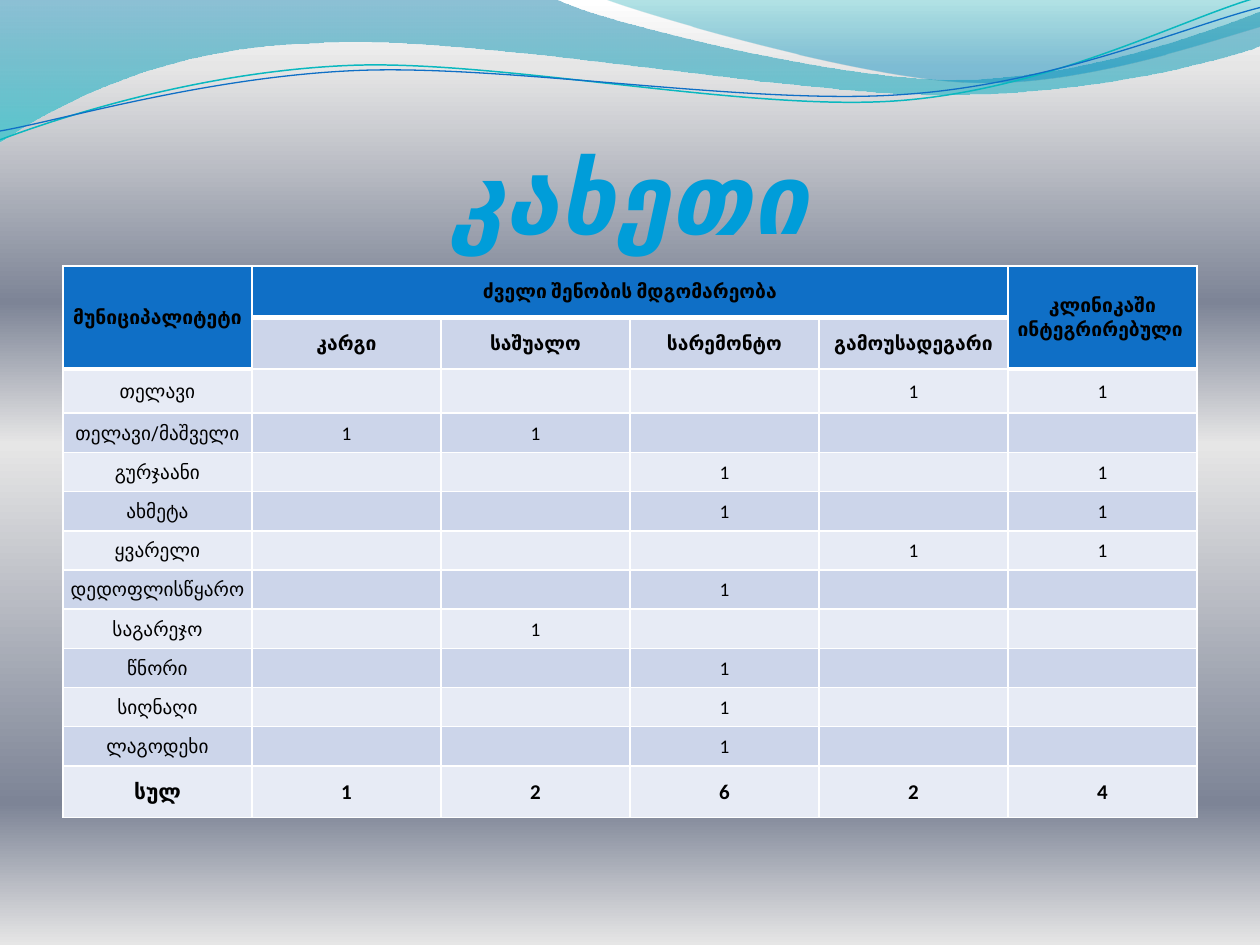
from lxml.etree import Element, SubElement
from pptx import Presentation
from pptx.dml.color import RGBColor
from pptx.enum.text import MSO_ANCHOR as Anchor, PP_ALIGN as Align
from pptx.oxml.ns import qn
from pptx.util import Inches, Pt

WIDTH, HEIGHT = 10, 7.5
MARGIN = 0.05 * WIDTH
TITLE = "კახეთი"
CONDITION = "ძველი შენობის მდგომარეობა"
GRADES = ["კარგი", "საშუალო", "სარემონტო", "გამოუსადეგარი"]
MUNICIPALITY, INTEGRATED = "მუნიციპალიტეტი", "კლინიკაში ინტეგრირებული "
BUILDINGS = [
    ("თელავი", "", "", "", 1, 1),
    ("თელავი/მაშველი", 1, 1, "", "", ""),
    ("გურჯაანი", "", "", 1, "", 1),
    ("ახმეტა", "", "", 1, "", 1),
    ("ყვარელი", "", "", "", 1, 1),
    ("დედოფლისწყარო", "", "", 1, "", ""),
    ("საგარეჯო", "", 1, "", "", ""),
    ("წნორი", "", "", 1, "", ""),
    ("სიღნაღი", "", "", 1, "", ""),
    ("ლაგოდეხი", "", "", 1, "", ""),
]
TOTAL = ("სულ", 1, 2, 6, 2, 4)
ROWS = [(MUNICIPALITY, CONDITION, "", "", "", INTEGRATED),
        ("", *GRADES, ""), *BUILDINGS, TOTAL]
TABLE_TOP, TABLE_HEIGHT = 2.11, 4.38
TALL_ROWS = {0: 0.41, 1: 0.41, 2: 0.35, len(ROWS) - 1: 0.41}
SHORT_ROW = (TABLE_HEIGHT - sum(TALL_ROWS.values())) / (len(ROWS) - len(TALL_ROWS))

BACKDROP = [(0, "FFFFFF", 100), (7, "E6E6E6", 100), (32, "7D8496", 100),
            (47, "E6E6E6", 100), (85, "7D8496", 100), (100, "E6E6E6", 100)]
BANDS = [
    ([(0, "0074A1", 45), (100, "00C6CF", 55)],
     [(0, 0), (4.4, -0.01),
      (4.76, 0.17, 6.64, 0.63, 7.58, 0.63), (8.53, 0.63, 9.58, 0.26, 10, 0.09),
      (10.01, 0.36),
      (9.83, 0.44, 8.7, 0.76, 7.46, 0.75), (6.22, 0.75, 3.82, 0.28, 2.57, 0.34),
      (1.29, 0.36, 0.46, 0.83, -0.01, 1.13), (0, 0)]),
    ([(0, "00A1A9", 30), (80, "008BBF", 45)],
     [(4.79, -0.01),
      (5.09, 0.11, 6.82, 0.62, 7.69, 0.65), (8.56, 0.69, 9.61, 0.32, 10, 0.21),
      (10, 0), (4.79, -0.01)]),
]
STRANDS = [
    ("0AB8BF", 0.85,
     [(0, 1.11), (0.48, 0.93, 1.58, 0.57, 2.77, 0.52),
      (3.95, 0.47, 5.93, 0.89, 7.13, 0.8), (8.33, 0.71, 9.38, 0.15, 9.98, -0.02)]),
    ("0F6FC6", 0.75,
     [(0, 1.04), (0.47, 0.96, 1.64, 0.61, 2.83, 0.56),
      (4.03, 0.51, 5.97, 0.84, 7.17, 0.75), (8.36, 0.67, 9.41, 0.21, 10, 0.06)]),
]


def color(code):
    return RGBColor.from_string(code)


def paint_gradient(fill, stops):
    fill.gradient()
    fill.gradient_angle = 270
    stop_list = fill._xPr.find(qn("a:gradFill")).find(qn("a:gsLst"))
    for default_stop in list(stop_list):
        stop_list.remove(default_stop)
    for position, code, opacity in stops:
        stop = SubElement(stop_list, qn("a:gs"), pos=str(position * 1000))
        tint = SubElement(stop, qn("a:srgbClr"), val=code)
        if opacity < 100:
            SubElement(tint, qn("a:alpha"), val=str(opacity * 1000))


def add_wave(slide, segments, close):
    ends = [(Inches(s[-2]), Inches(s[-1])) for s in segments]
    builder = slide.shapes.build_freeform(*ends[0])
    builder.add_line_segments(ends[1:], close=close)
    wave = builder.convert_to_shape()
    wave.shadow.inherit = False
    lines = list(wave._element.iter(qn("a:lnTo")))
    for line, segment in zip(lines, segments[1:]):
        if len(segment) == 6:
            line.tag = qn("a:cubicBezTo")
            for i in (0, 2):
                handle = Element(qn("a:pt"), x=str(Inches(segment[i]) - wave.left),
                                 y=str(Inches(segment[i + 1]) - wave.top))
                line.insert(i // 2, handle)
    return wave


def style_text(paragraph, size, face, code, bold):
    paragraph.alignment = Align.CENTER
    font = paragraph.font
    font.size, font.name, font.bold = Pt(size), face, bold
    font.color.rgb = color(code)


def add_title(slide):
    box = slide.shapes.add_textbox(
        Inches(MARGIN), Inches(0.77), Inches(WIDTH - 2 * MARGIN), Inches(1.25))
    frame = box.text_frame
    frame.word_wrap, frame.vertical_anchor = True, Anchor.BOTTOM
    frame.margin_left = frame.margin_right = frame.margin_bottom = 0
    heading = frame.paragraphs[0]
    heading.text = TITLE
    style_text(heading, 56, "Calibri", "009DD9", True)
    heading.font.italic = True
    heading.runs[0].font._rPr.set("spc", "50")


def add_borders(cell, bottom_weight):
    properties = cell._tc.get_or_add_tcPr()
    weights = {"a:lnL": 1, "a:lnR": 1, "a:lnT": 1, "a:lnB": bottom_weight}
    for i, (side, weight) in enumerate(weights.items()):
        border = Element(qn(side), w=str(Pt(weight)))
        SubElement(SubElement(border, qn("a:solidFill")), qn("a:srgbClr"), val="FFFFFF")
        properties.insert(i, border)


def add_building_table(slide):
    columns, last = len(TOTAL), len(ROWS) - 1
    table = slide.shapes.add_table(
        len(ROWS), columns, Inches(MARGIN), Inches(TABLE_TOP),
        Inches(WIDTH - 2 * MARGIN), Inches(TABLE_HEIGHT)).table
    for r, values in enumerate(ROWS):
        table.rows[r].height = Inches(TALL_ROWS.get(r, SHORT_ROW))
        for c, value in enumerate(values):
            cell = table.cell(r, c)
            cell.margin_left = cell.margin_right = cell.margin_top = Inches(0.01)
            cell.margin_bottom = 0
            cell.vertical_anchor = Anchor.MIDDLE
            header = r == 0 or (r == 1 and c in (0, columns - 1))
            band = "CCD5EA" if r % 2 else "E7EBF5"
            cell.fill.solid()
            cell.fill.fore_color.rgb = color("0F6FC6" if header else band)
            add_borders(cell, 3 if header else 1)
            entry = cell.text_frame.paragraphs[0]
            if value != "":
                entry.text = str(value)
            style_text(entry, 12 if r == last else 11,
                       "Calibri" if c else "Roboto", "000000", r < 2 or r == last)
    table.cell(0, 0).merge(table.cell(1, 0))
    table.cell(0, 1).merge(table.cell(0, len(GRADES)))
    table.cell(0, columns - 1).merge(table.cell(1, columns - 1))


def main():
    deck = Presentation()
    deck.slide_width, deck.slide_height = Inches(WIDTH), Inches(HEIGHT)
    slide = deck.slides.add_slide(deck.slide_layouts[6])
    paint_gradient(slide.background.fill, BACKDROP)
    for stops, segments in BANDS:
        band = add_wave(slide, segments, True)
        paint_gradient(band.fill, stops)
        band.line.fill.background()
    for code, weight, segments in STRANDS:
        strand = add_wave(slide, segments, False)
        strand.fill.background()
        strand.line.color.rgb = color(code)
        strand.line.width = Pt(weight)
    add_title(slide)
    add_building_table(slide)
    deck.save("out.pptx")


if __name__ == "__main__":
    main()
